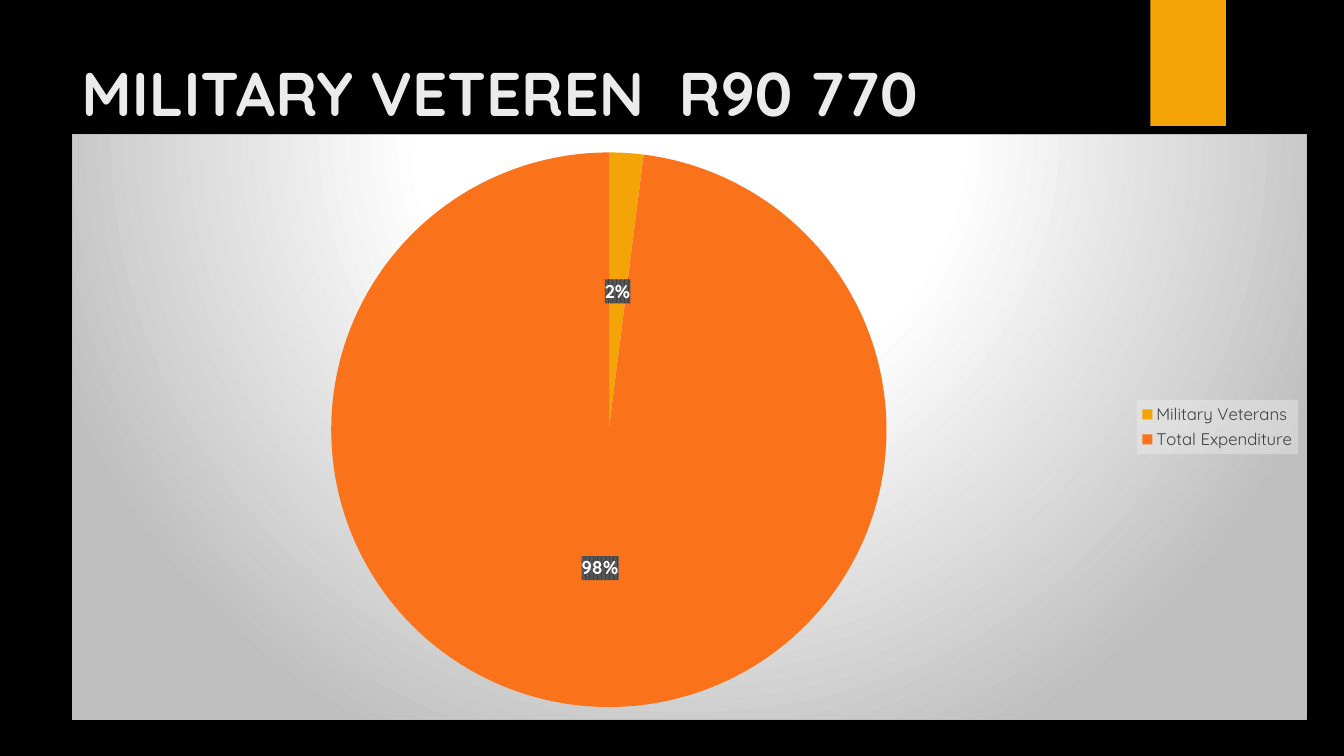
"""Build a slide comparing military veteran spending with total expenditure."""
from dataclasses import dataclass

from lxml import etree
from pptx import Presentation
from pptx import util as u
from pptx.chart import data as chart_data
from pptx.dml.color import RGBColor
from pptx.enum import chart as charts, shapes, text
from pptx.oxml import parse_xml
from pptx.oxml.ns import nsdecls

FONT = "Quicksand"
BLACK = RGBColor(0x00, 0x00, 0x00)
WHITE = RGBColor(0xFF, 0xFF, 0xFF)
OFF_WHITE = RGBColor(0xEB, 0xEB, 0xEB)
PALE_GREY = RGBColor(0xF2, 0xF2, 0xF2)
SILVER = RGBColor(0xBF, 0xBF, 0xBF)
MID_GREY = RGBColor(0x59, 0x59, 0x59)
DARK_GREY = RGBColor(0x40, 0x40, 0x40)
AMBER = RGBColor(0xF5, 0xA4, 0x08)
ORANGE = RGBColor(0xFA, 0x73, 0x1A)


@dataclass(frozen=True)
class Slice:
    name: str
    share: int
    color: RGBColor


SLICES = [
    Slice("Military Veterans", 2, AMBER),
    Slice("Total Expenditure", 98, ORANGE),
]


def style_font(font, size: float, color: RGBColor, bold: bool = False) -> None:
    """Set typeface, size, colour and weight."""
    font.name = FONT
    font.size = u.Pt(size)
    font.bold = bold
    font.color.rgb = color


def color_xml(color: RGBColor, inner: str = "") -> str:
    """Return a colour element."""
    return f'<a:srgbClr val="{color}">{inner}</a:srgbClr>'


def shape_properties(content: str) -> etree.ElementBase:
    """Wrap fill and line markup as chart shape properties."""
    return parse_xml(f'<c:spPr {nsdecls("c", "a")}>{content}</c:spPr>')


def add_title(page) -> None:
    """Add the heading."""
    box = page.shapes.add_textbox(
        u.Inches(0.71), u.Inches(0.5), u.Inches(10.29), u.Inches(0.83))
    frame = box.text_frame
    frame.word_wrap = True
    frame.vertical_anchor = text.MSO_ANCHOR.TOP
    para = frame.paragraphs[0]
    para.text = "MILITARY VETEREN  R90 770"
    style_font(para.font, 44, OFF_WHITE, bold=True)


def add_ribbon(page) -> None:
    """Add the amber tab at the top edge."""
    ribbon = page.shapes.add_shape(
        shapes.MSO_SHAPE.RECTANGLE,
        u.Inches(11.41), 0, u.Inches(0.75), u.Inches(1.25))
    ribbon.shadow.inherit = False
    ribbon.fill.solid()
    ribbon.fill.fore_color.rgb = AMBER
    ribbon.line.fill.background()


def style_backdrop(chart) -> None:
    """Give the chart area a radial gradient and a thin border."""
    stops = "".join(
        f'<a:gs pos="{percent * 1000}">{color_xml(color)}</a:gs>'
        for percent, color in [(0, WHITE), (39, WHITE), (100, SILVER)])
    backdrop = shape_properties(
        f'<a:gradFill><a:gsLst>{stops}</a:gsLst><a:path path="circle">'
        '<a:fillToRect l="50000" t="-80000" r="50000" b="180000"/></a:path></a:gradFill>'
        f'<a:ln w="{u.Pt(0.75)}"><a:solidFill>{color_xml(SILVER)}</a:solidFill></a:ln>')
    chart.element.find("{*}chart").addnext(backdrop)


def place_plot(chart, x: float, y: float, w: float, h: float) -> None:
    """Fix the pie's place as fractions of the chart area."""
    plot_area = chart.element.find(".//{*}plotArea")
    for layout in plot_area.findall("{*}layout"):
        plot_area.remove(layout)
    sizes = "".join(f'<c:{key} val="{value}"/>'
                    for key, value in [("x", x), ("y", y), ("w", w), ("h", h)])
    plot_area.insert(0, parse_xml(
        f'<c:layout {nsdecls("c")}><c:manualLayout><c:layoutTarget val="inner"/>'
        f'<c:xMode val="edge"/><c:yMode val="edge"/>{sizes}</c:manualLayout></c:layout>'))


def style_labels(plot) -> None:
    """Show percentages on patterned grey plates."""
    plot.has_data_labels = True
    labels = plot.data_labels
    labels.show_value = False
    labels.show_percentage = True
    labels.number_format = "0%"
    labels.number_format_is_linked = False
    labels.position = charts.XL_LABEL_POSITION.CENTER
    style_font(labels.font, 13.3, WHITE, bold=True)
    plate = shape_properties(
        f'<a:pattFill prst="pct75"><a:fgClr>{color_xml(DARK_GREY)}</a:fgClr>'
        f'<a:bgClr>{color_xml(MID_GREY)}</a:bgClr></a:pattFill>')
    plot._element.find("{*}dLbls/{*}txPr").addprevious(plate)


def style_legend(chart) -> None:
    """Put a translucent legend on the right."""
    chart.has_legend = True
    legend = chart.legend
    legend.position = charts.XL_LEGEND_POSITION.RIGHT
    legend.include_in_layout = False
    style_font(legend.font, 12, DARK_GREY)
    panel = shape_properties(
        f'<a:solidFill>{color_xml(PALE_GREY, "<a:alpha val=%s/>" % chr(34).join(["", "39000", ""]))}'
        '</a:solidFill>')
    chart.element.find(".//{*}legend/{*}txPr").addprevious(panel)


def add_pie(page, slices: list[Slice]) -> None:
    """Add the expenditure pie chart."""
    values = chart_data.CategoryChartData()
    values.categories = [part.name for part in slices]
    values.add_series("Series 1", [part.share for part in slices])
    chart = page.shapes.add_chart(
        charts.XL_CHART_TYPE.PIE, u.Inches(0.71), u.Inches(1.33),
        u.Inches(12.25), u.Inches(5.81), values).chart
    chart.has_title = False
    style_font(chart.font, 10, WHITE)
    plot = chart.plots[0]
    plot.vary_by_categories = True
    for index, part in enumerate(slices):
        point = plot.series[0].points[index]
        point.format.fill.solid()
        point.format.fill.fore_color.rgb = part.color
        point.format.line.fill.background()
    style_backdrop(chart)
    place_plot(chart, 0.21, 0.03, 0.45, 0.95)
    style_labels(plot)
    style_legend(chart)


def main() -> None:
    """Assemble and save the deck."""
    deck = Presentation()
    deck.slide_width, deck.slide_height = u.Inches(13.33), u.Inches(7.5)
    page = deck.slides.add_slide(deck.slide_layouts[6])
    page.background.fill.solid()
    page.background.fill.fore_color.rgb = BLACK
    add_ribbon(page)
    add_title(page)
    add_pie(page, SLICES)
    deck.save("out.pptx")


if __name__ == "__main__":
    main()
